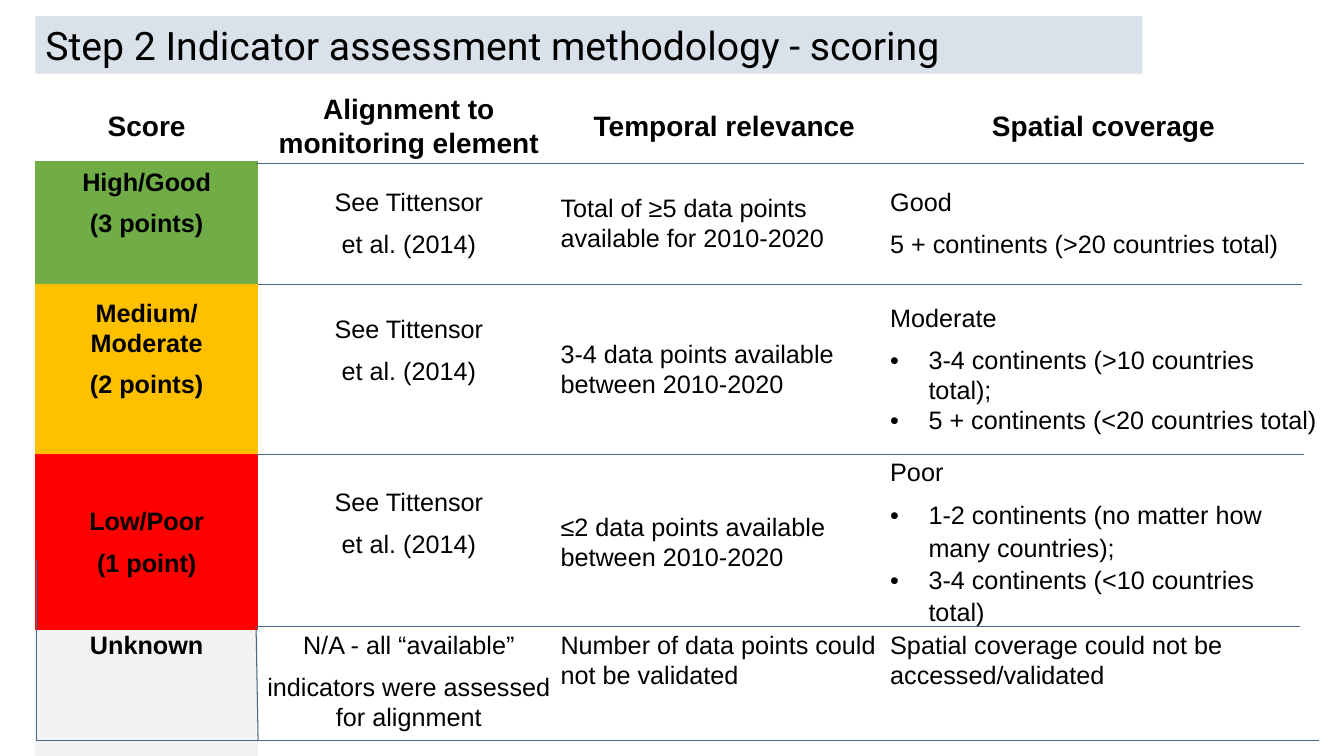
from dataclasses import dataclass

from lxml.etree import SubElement
from pptx import Presentation
from pptx.dml.color import RGBColor
from pptx.enum.shapes import MSO_CONNECTOR
from pptx.enum.text import MSO_ANCHOR as Anchor, PP_ALIGN as Align
from pptx.oxml.ns import qn
from pptx.util import Inches, Pt


@dataclass(frozen=True)
class Theme:
    font: str = "Arial"
    title_font: str = "Roboto"
    title_size: int = 28
    header_size: int = 20
    body_size: int = 18
    text: str = "000000"
    title_fill: str = "D9E1EA"
    rule: str = "496787"
    high: str = "70AD47"
    medium: str = "FFC000"
    low: str = "FF0000"
    unknown: str = "F2F2F2"


THEME = Theme()
NO_GRID_STYLE = "{2D5ABB26-0587-4C30-8999-92F81FD0307C}"
COLUMN_WIDTHS = (2.21, 2.99, 3.27, 4.25)
ROW_HEIGHTS = (0.71, 1.22, 1.68, 1.75, 1.91)
HEADERS = ("Score", "Alignment to monitoring element", "Temporal relevance", "Spatial coverage")
CITATION = ("See Tittensor", "et al. (2014)")


@dataclass(frozen=True)
class ScoreRow:
    fill: str
    score: tuple
    alignment: tuple
    temporal: str
    spatial: str
    details: tuple = ()
    bullets: tuple = ()
    bullet_spacing: float = 1.07
    score_lift: float = 0
    alignment_lift: float = 0
    anchor: Anchor = Anchor.MIDDLE


SCORES = (
    ScoreRow(THEME.high, ("High/Good", "(3 points)"), CITATION,
             "Total of ≥5 data points available for 2010-2020", "Good",
             details=("5 + continents (>20 countries total)",), score_lift=0.41),
    ScoreRow(THEME.medium, ("Medium/ Moderate", "(2 points)"), CITATION,
             "3-4 data points available between 2010-2020", "Moderate",
             bullets=("3-4 continents (>10 countries total);",
                      "5 + continents (<20 countries total)"),
             score_lift=0.41, alignment_lift=0.38),
    ScoreRow(THEME.low, ("Low/Poor", "(1 point)"), CITATION,
             "≤2 data points available between 2010-2020", "Poor",
             bullets=("1-2 continents (no matter how many countries);",
                      "3-4 continents (<10 countries total)"),
             bullet_spacing=1.15, alignment_lift=0.38),
    ScoreRow(THEME.unknown, ("Unknown",),
             ("N/A - all “available”", "indicators were assessed for alignment"),
             "Number of data points could not be validated",
             "Spatial coverage could not be accessed/validated", anchor=Anchor.TOP),
)

RULES = (
    (2.54, 1.62, 12.93, 1.62),
    (2.56, 2.82, 12.91, 2.82),
    (2.54, 4.51, 12.93, 4.51),
    (2.54, 6.22, 12.89, 6.22),
    (0.36, 7.35, 13.08, 7.35),
    (2.54, 6.22, 2.56, 7.35),
    (0.36, 5.56, 0.36, 7.35),
)


def color(value):
    return RGBColor.from_string(value)


def add_run(p, text, size, font=THEME.font, bold=False):
    r = p.add_run()
    r.text = text
    r.font.name = font
    r.font.size = Pt(size)
    r.font.bold = bold
    r.font.color.rgb = color(THEME.text)


def add_title(s, text):
    sp = s.shapes.title
    sp.left, sp.top, sp.width, sp.height = map(Inches, (0.35, 0.16, 10.98, 0.57))
    sp.fill.solid()
    sp.fill.fore_color.rgb = color(THEME.title_fill)
    tf = sp.text_frame
    tf.vertical_anchor = Anchor.TOP
    p = tf.paragraphs[0]
    p.alignment = Align.LEFT
    add_run(p, text, THEME.title_size, THEME.title_font)


def add_bullet(p):
    pPr = p._p.get_or_add_pPr()
    pPr.set("marL", str(Inches(0.38)))
    pPr.set("indent", str(-Inches(0.38)))
    SubElement(pPr, qn("a:buFont"), typeface=THEME.font)
    SubElement(pPr, qn("a:buChar"), char="•")


def fill_cell(cell, lines, size=THEME.body_size, align=Align.LEFT, bold=False,
              fill=None, anchor=Anchor.MIDDLE, lift=0, bullets=(), bullet_spacing=1.07):
    cell.margin_left = cell.margin_right = Inches(0.01)
    cell.margin_top = 0
    cell.margin_bottom = Inches(lift)
    cell.vertical_anchor = anchor
    if fill:
        cell.fill.solid()
        cell.fill.fore_color.rgb = color(fill)
    else:
        cell.fill.background()
    tf = cell.text_frame
    for i, text in enumerate((*lines, *bullets)):
        p = tf.add_paragraph() if i else tf.paragraphs[0]
        is_bullet = i >= len(lines)
        p.alignment = align
        p.line_spacing = bullet_spacing if is_bullet else 1.07
        p.space_after = Pt(0 if text in bullets[:-1] else 8)
        if is_bullet:
            add_bullet(p)
        add_run(p, text, size, bold=bold)


def add_score_table(s):
    frame = s.shapes.add_table(
        len(ROW_HEIGHTS), len(COLUMN_WIDTHS), Inches(0.35), Inches(0.89),
        Inches(sum(COLUMN_WIDTHS)), Inches(sum(ROW_HEIGHTS)))
    for style in frame.element.iter(qn("a:tableStyleId")):
        style.text = NO_GRID_STYLE
    table = frame.table
    table.first_row = table.horz_banding = False
    for column, width in zip(table.columns, COLUMN_WIDTHS):
        column.width = Inches(width)
    for row, height in zip(table.rows, ROW_HEIGHTS):
        row.height = Inches(height)
    for i, header in enumerate(HEADERS):
        fill_cell(table.cell(0, i), (header,), THEME.header_size, Align.CENTER, bold=True)
    for i, row in enumerate(SCORES, 1):
        score, alignment, temporal, spatial = table.rows[i].cells
        fill_cell(score, row.score, align=Align.CENTER, bold=True, fill=row.fill,
                  anchor=row.anchor, lift=row.score_lift)
        fill_cell(alignment, row.alignment, align=Align.CENTER,
                  anchor=row.anchor, lift=row.alignment_lift)
        fill_cell(temporal, (row.temporal,), anchor=row.anchor)
        fill_cell(spatial, (row.spatial, *row.details), anchor=row.anchor,
                  bullets=row.bullets, bullet_spacing=row.bullet_spacing)


def add_rule(s, ends):
    line = s.shapes.add_connector(MSO_CONNECTOR.STRAIGHT, *map(Inches, ends))
    line.line.color.rgb = color(THEME.rule)
    line.line.width = Pt(0.75)
    SubElement(line.element.spPr, qn("a:effectLst"))


def main():
    prs = Presentation()
    prs.slide_width, prs.slide_height = Inches(13.33), Inches(7.5)
    s = prs.slides.add_slide(prs.slide_layouts[5])
    add_score_table(s)
    add_title(s, "Step 2 Indicator assessment methodology - scoring")
    for ends in RULES:
        add_rule(s, ends)
    prs.save("out.pptx")


if __name__ == "__main__":
    main()
